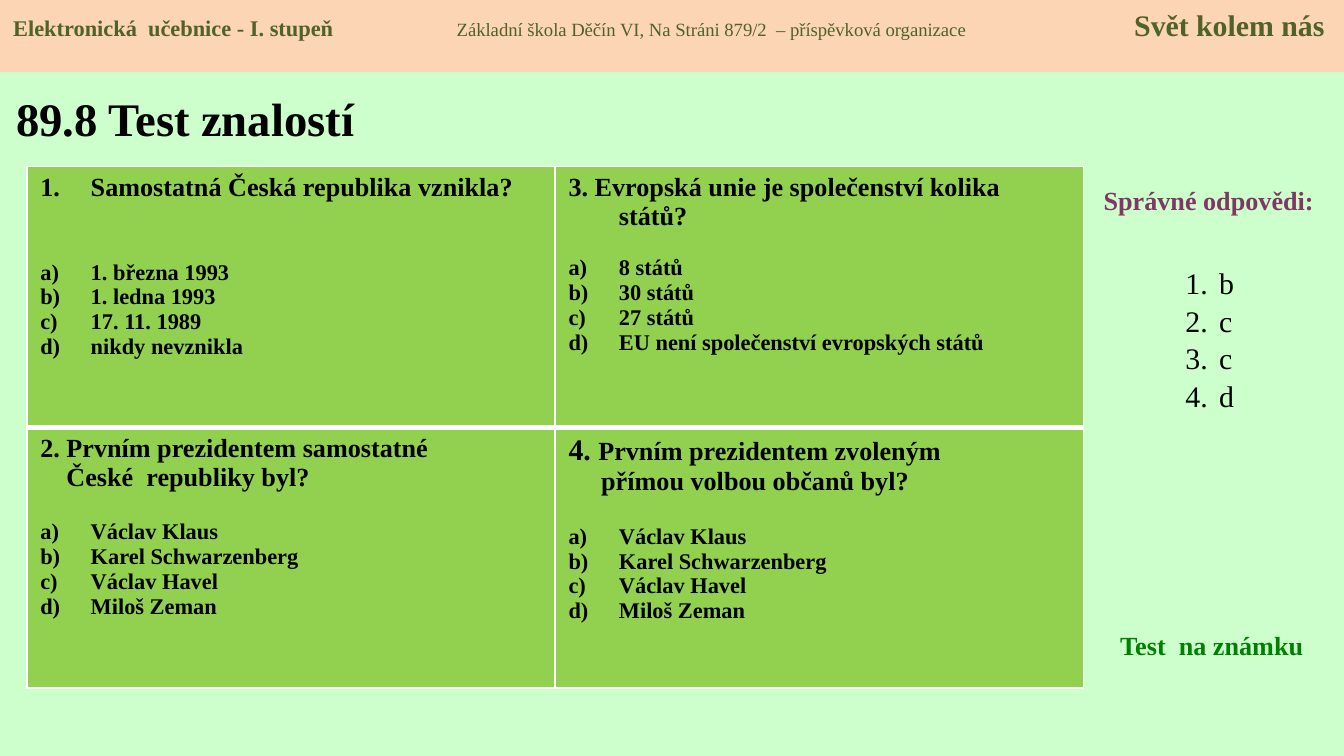
"""Build a quiz slide with four questions and their answers."""
import pptx
import pptx.dml.color
import pptx.enum.shapes
import pptx.enum.text
import pptx.oxml.ns
import pptx.util
from lxml import etree

Pt = pptx.util.Pt
ALIGN = pptx.enum.text.PP_ALIGN
ANCHOR = pptx.enum.text.MSO_ANCHOR
FONT = "Times New Roman"
COLORS = {
    "background": "CCFFCC", "band": "FCD5B5", "band_text": "4F6228",
    "cell": "92D050", "border": "FFFFFF", "text": "000000",
    "answers": "813763", "grade": "008000",
}
PRESIDENTS = ["Václav Klaus", "Karel Schwarzenberg", "Václav Havel", "Miloš Zeman"]


def rgb(name):
    """Return the named colour."""
    return pptx.dml.color.RGBColor.from_string(COLORS[name])


def add_child(parent, tag, **attributes):
    """Append a drawing element to its parent."""
    return etree.SubElement(parent, pptx.oxml.ns.qn(tag), **attributes)


def add_span(para, text, size, color="text", bold=True):
    """Append one formatted run."""
    span = para.add_run()
    span.text = text
    span.font.name = FONT
    span.font.size = Pt(size)
    span.font.bold = bold
    span.font.color.rgb = rgb(color)


def set_indent(para, left, hanging=0, numbering=None):
    """Set the left margin, hanging indent and automatic numbering."""
    properties = para._p.get_or_add_pPr()
    properties.set("marL", str(Pt(left)))
    properties.set("indent", str(Pt(-hanging)))
    if numbering:
        add_child(properties, "a:buFont", typeface="+mj-lt")
        add_child(properties, "a:buAutoNum", type=numbering)


def next_para(frame):
    """Return the empty first paragraph or a new one."""
    first = frame.paragraphs[0]
    return first if not first.runs else frame.add_paragraph()


def add_title(slide, text):
    """Place and format the slide title."""
    title = slide.shapes.title
    title.left, title.top, title.width, title.height = Pt(1.5), Pt(39.5), Pt(230), Pt(47)
    frame = title.text_frame
    frame.auto_size = pptx.enum.text.MSO_AUTO_SIZE.NONE
    frame.vertical_anchor = ANCHOR.MIDDLE
    frame.paragraphs[0].alignment = ALIGN.LEFT
    add_span(frame.paragraphs[0], text, 25)


def add_box(slide, left, top, width, height):
    """Add a wrapping text box and return its frame."""
    box = slide.shapes.add_textbox(Pt(left), Pt(top), Pt(width), Pt(height))
    box.text_frame.word_wrap = True
    return box.text_frame


def add_label(slide, area, text, color, align):
    """Add a one-line bold label."""
    para = add_box(slide, *area).paragraphs[0]
    para.alignment = align
    add_span(para, text, 14, color)


def add_key(slide, answers):
    """Add the numbered list of right answers."""
    frame = add_box(slide, 628, 118.8, 40, 143)
    frame.margin_top = Pt(23)
    for index, answer in enumerate(answers):
        para = next_para(frame)
        set_indent(para, 18, 18, "arabicPeriod")
        para.space_before = Pt(1 if index else 0)
        add_span(para, answer, 16, bold=False)


def add_band(slide, parts):
    """Add the top band with its three tabbed texts."""
    band = slide.shapes.add_shape(
        pptx.enum.shapes.MSO_SHAPE.RECTANGLE, 0, 0, Pt(720), Pt(38.7))
    band.shadow.inherit = False
    band.fill.solid()
    band.fill.fore_color.rgb = rgb("band")
    band.line.fill.background()
    frame = band.text_frame
    frame.word_wrap = True
    frame.vertical_anchor = ANCHOR.TOP
    para = frame.paragraphs[0]
    para.alignment = ALIGN.LEFT
    tabs = add_child(para._p.get_or_add_pPr(), "a:tabLst")
    for position, align in ((237.6, "l"), (702.5, "r")):
        add_child(tabs, "a:tab", pos=str(Pt(position)), algn=align)
    for index, (text, size, bold) in enumerate(parts):
        add_span(para, "\t" + text if index else text, size, "band_text", bold)


def set_borders(cell, bottom):
    """Draw white borders with the given bottom width."""
    properties = cell._tc.get_or_add_tcPr()
    widths = {"a:lnL": 1, "a:lnR": 1, "a:lnT": 1, "a:lnB": bottom}
    for position, (tag, width) in enumerate(widths.items()):
        line = etree.Element(pptx.oxml.ns.qn(tag), w=str(Pt(width)))
        add_child(add_child(line, "a:solidFill"), "a:srgbClr", val=COLORS["border"])
        properties.insert(position, line)


def fill_cell(cell, question, gap, answers):
    """Write a question and its lettered answers."""
    cell.fill.solid()
    cell.fill.fore_color.rgb = rgb("cell")
    for left, hanging, numbering, spans in question:
        para = next_para(cell.text_frame)
        set_indent(para, left, hanging, numbering)
        for text, size in spans:
            add_span(para, text, size)
    for index, answer in enumerate(answers):
        para = next_para(cell.text_frame)
        set_indent(para, 27, 27, "alphaLcParenR")
        para.space_before = Pt(0 if index else gap)
        add_span(para, answer, 12)


def add_quiz(slide, questions):
    """Add the two-by-two table of questions."""
    table = slide.shapes.add_table(2, 2, Pt(14.4), Pt(89.3), Pt(566), Pt(279.4)).table
    table.first_row = False
    table.horz_banding = False
    for index, question in enumerate(questions):
        row, column = divmod(index, 2)
        cell = table.cell(row, column)
        fill_cell(cell, *question)
        set_borders(cell, 1 if row else 3)


def main():
    """Build and save the deck."""
    deck = pptx.Presentation()
    deck.slide_width, deck.slide_height = Pt(720), Pt(405)
    slide = deck.slides.add_slide(deck.slide_layouts[5])
    slide.background.fill.solid()
    slide.background.fill.fore_color.rgb = rgb("background")

    add_title(slide, "89.8 Test znalostí")
    add_label(slide, (579.6, 95, 136, 24.5), "Správné odpovědi:", "answers", ALIGN.CENTER)
    add_quiz(slide, [
        ([(27, 27, "arabicPeriod", [("Samostatná Česká republika vznikla?", 14)])], 31,
         ["1. března 1993", "1. ledna 1993", "17. 11. 1989", "nikdy nevznikla"]),
        ([(27, 27, None, [("3. Evropská unie je společenství kolika států?", 14)])], 13,
         ["8 států", "30 států", "27 států", "EU není společenství evropských států"]),
        ([(0, 0, None, [("2. Prvním prezidentem samostatné", 14)]),
          (14, 0, None, [("České  republiky byl?", 14)])], 15, PRESIDENTS),
        ([(0, 0, None, [("4. ", 16), ("Prvním prezidentem zvoleným", 14)]),
          (17.5, 0, None, [("přímou volbou občanů byl?", 14)])], 15, PRESIDENTS),
    ])
    add_key(slide, "bccd")
    add_label(slide, (593, 333.4, 118, 24.5), "Test  na známku", "grade", ALIGN.LEFT)
    add_band(slide, [
        ("Elektronická  učebnice - I. stupeň", 12, True),
        ("Základní škola Děčín VI, Na Stráni 879/2  – příspěvková organizace", 10, False),
        ("Svět kolem nás", 16, True),
    ])
    deck.save("out.pptx")


if __name__ == "__main__":
    main()
